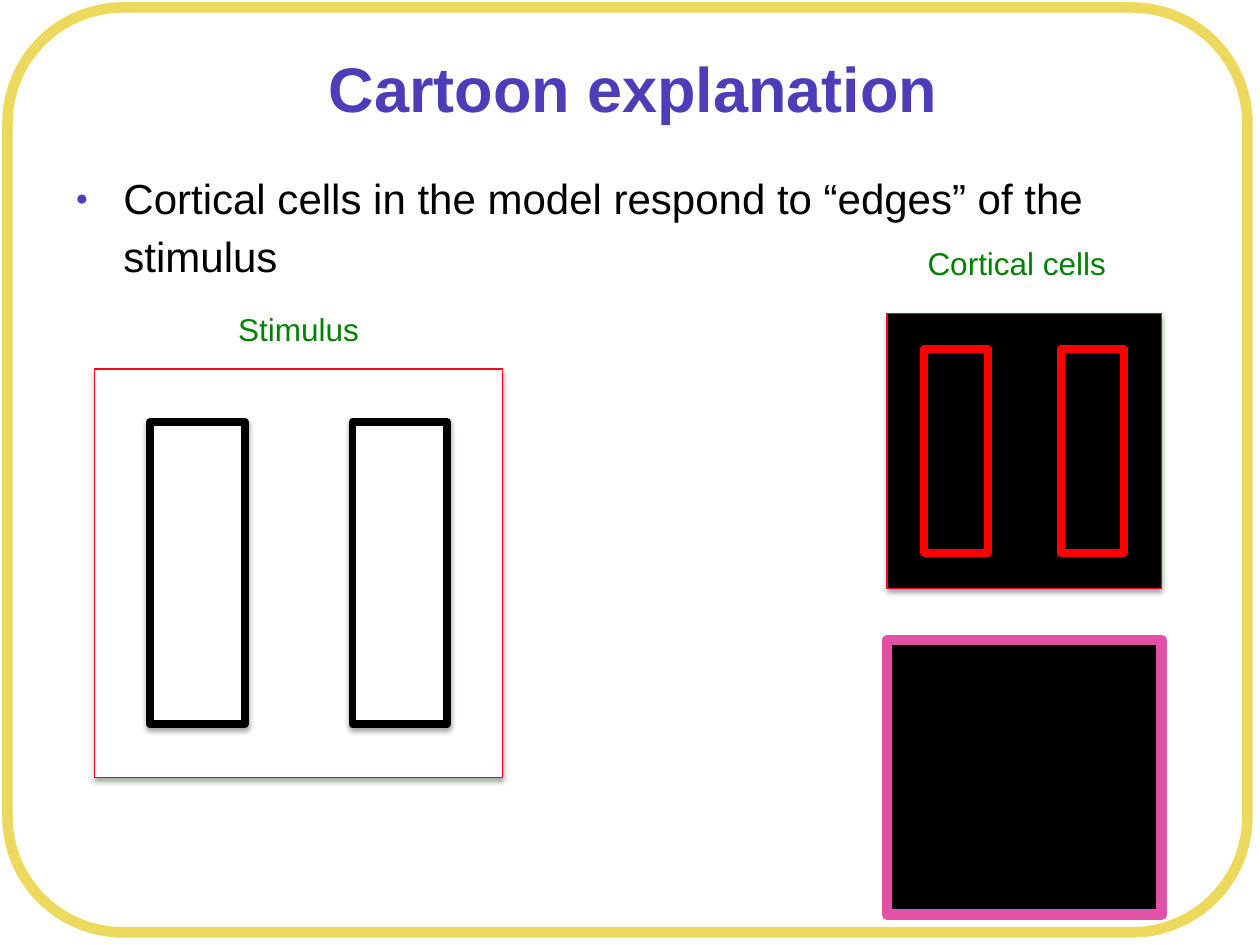
from pptx import Presentation
from pptx.dml.color import RGBColor
from pptx.enum.shapes import MSO_SHAPE as Preset
from pptx.enum.text import MSO_ANCHOR as Anchor, MSO_AUTO_SIZE as AutoSize, PP_ALIGN as Align
from pptx.oxml.ns import qn
from pptx.util import Inches, Pt
from lxml.etree import SubElement

YELLOW = RGBColor(0xEC, 0xD9, 0x5E)
PURPLE = RGBColor(0x4E, 0x3D, 0xB9)
GREEN = RGBColor(0x00, 0x80, 0x00)
CRIMSON = RGBColor(0xF7, 0x00, 0x26)
RED = RGBColor(0xFF, 0x00, 0x00)
PINK = RGBColor(0xE2, 0x51, 0xA6)
BLACK = RGBColor(0x00, 0x00, 0x00)
WHITE = RGBColor(0xFF, 0xFF, 0xFF)


def inches(box):
    """Convert left, top, width and height to lengths."""
    return [Inches(value) for value in box]


def place(shape, box):
    """Move a shape to a box."""
    shape.left, shape.top, shape.width, shape.height = inches(box)


def format_text(paragraph, size, color, bold=False):
    """Set the font of every run in a paragraph."""
    for run in paragraph.runs:
        run.font.name = "Arial"
        run.font.size = Pt(size)
        run.font.bold = bold
        run.font.color.rgb = color


def add_outlined(shapes, preset, box, fill, line, width):
    """Add a shape with a round-joined outline and no shadow."""
    shape = shapes.add_shape(preset, *inches(box))
    if fill is None:
        shape.fill.background()
    else:
        shape.fill.solid()
        shape.fill.fore_color.rgb = fill
    shape.line.color.rgb = line
    shape.line.width = Pt(width)
    SubElement(shape.element.spPr.find(qn("a:ln")), qn("a:round"))
    shape.shadow.inherit = False
    return shape


def add_shadow(shape):
    """Cast a soft black shadow straight down."""
    effects = shape.element.spPr.find(qn("a:effectLst"))
    shadow = SubElement(effects, qn("a:outerShdw"), blurRad=str(Pt(3.1)),
                        dist=str(Pt(1.8)), dir="5400000", rotWithShape="0")
    color = SubElement(shadow, qn("a:srgbClr"), val=str(BLACK))
    SubElement(color, qn("a:alpha"), val="35000")


def add_frame(slide, box):
    """Put the rounded border behind everything else."""
    frame = add_outlined(slide.shapes, Preset.ROUNDED_RECTANGLE, box, None, YELLOW, 6)
    frame.adjustments[0] = 0.125
    slide.shapes.title.element.addprevious(frame.element)


def fill_title(title, box, text):
    """Place and format the slide title."""
    place(title, box)
    frame = title.text_frame
    frame.text = text
    frame.auto_size = AutoSize.NONE
    frame.vertical_anchor = Anchor.MIDDLE
    paragraph = frame.paragraphs[0]
    paragraph.alignment = Align.CENTER
    paragraph.line_spacing = 0.9
    format_text(paragraph, 36, PURPLE, bold=True)


def fill_body(body, box, text):
    """Place and format the bulleted statement."""
    place(body, box)
    frame = body.text_frame
    frame.text = text
    frame.auto_size = AutoSize.NONE
    paragraph = frame.paragraphs[0]
    paragraph.line_spacing = 1.15
    paragraph.space_before = Pt(7.2)
    format_text(paragraph, 24, BLACK)
    properties = paragraph._p.get_or_add_pPr()
    properties.set("marL", str(Inches(0.38)))
    properties.set("indent", str(Inches(-0.38)))
    color = SubElement(properties, qn("a:buClr"))
    SubElement(color, qn("a:srgbClr"), val=str(PURPLE))
    SubElement(properties, qn("a:buSzPct"), val="50000")
    SubElement(properties, qn("a:buFont"), typeface="Arial")
    SubElement(properties, qn("a:buChar"), char="●")


def add_label(slide, box, text):
    """Add a green caption."""
    label = slide.shapes.add_textbox(*inches(box))
    frame = label.text_frame
    frame.text = text
    frame.word_wrap = False
    frame.auto_size = AutoSize.SHAPE_TO_FIT_TEXT
    frame.paragraphs[0].alignment = Align.CENTER
    format_text(frame.paragraphs[0], 18, GREEN)


def add_bar_panel(slide, left, top, size, fill, bar_line):
    """Add a square panel with two upright bars placed symmetrically."""
    shapes = slide.shapes.add_group_shape().shapes
    panel = add_outlined(shapes, Preset.RECTANGLE, (left, top, size, size),
                         fill, CRIMSON, 0.75)
    add_shadow(panel)
    margin, width, height = 0.136 * size, 0.232 * size, 0.74 * size
    for bar_left in (left + margin, left + size - margin - width):
        bar_box = (bar_left, top + 0.13 * size, width, height)
        add_shadow(add_outlined(shapes, Preset.RECTANGLE, bar_box, fill, bar_line, 4.5))


def main():
    """Build the slide and save it."""
    presentation = Presentation()
    presentation.slide_width, presentation.slide_height = Inches(10), Inches(7.5)
    slide = presentation.slides.add_slide(presentation.slide_layouts[1])
    add_frame(slide, (0.06, 0.06, 9.84, 7.34))
    fill_title(slide.shapes.title, (0.5, 0.32, 9.05, 0.82), "Cartoon explanation")
    fill_body(slide.placeholders[1], (0.5, 1.26, 9.05, 1.34),
              "Cortical cells in the model respond to “edges” of the stimulus")
    add_label(slide, (1.79, 2.41, 1.16, 0.4), "Stimulus")
    add_label(slide, (7.23, 1.89, 1.68, 0.4), "Cortical cells")
    add_bar_panel(slide, 0.75, 2.93, 3.24, WHITE, BLACK)
    add_bar_panel(slide, 7.04, 2.49, 2.18, BLACK, RED)
    add_outlined(slide.shapes, Preset.RECTANGLE, (7.04, 5.08, 2.18, 2.18), BLACK, PINK, 6)
    presentation.save("out.pptx")


if __name__ == "__main__":
    main()
